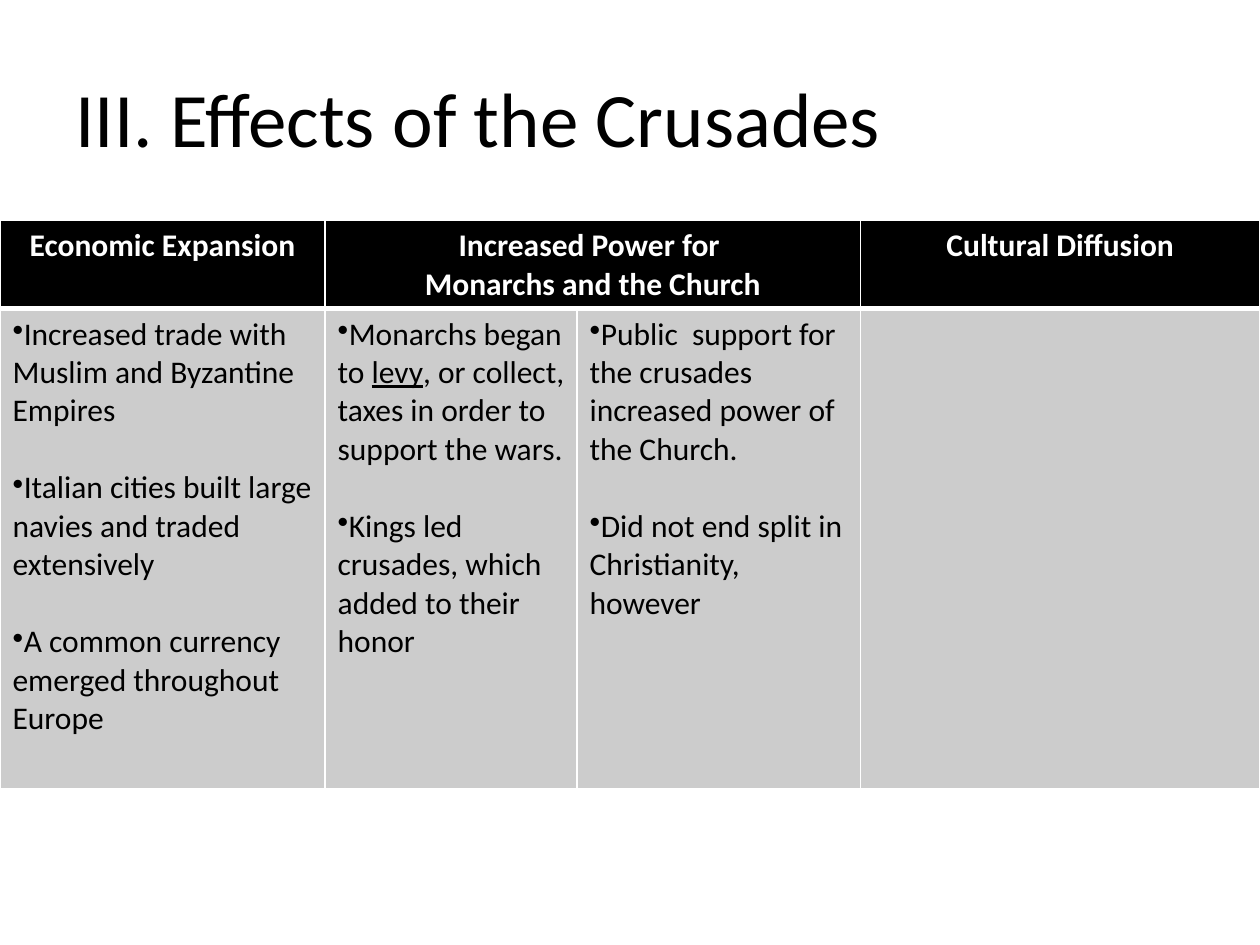
from lxml.etree import SubElement as Sub
from pptx import Presentation
from pptx.dml.color import RGBColor as RGB
from pptx.enum.text import MSO_ANCHOR as ANCHOR, PP_ALIGN as ALIGN
from pptx.oxml.ns import qn
from pptx.util import Inches, Pt

COLORS = {"black": "000000", "white": "FFFFFF", "grey": "CCCCCC"}
TITLE = "III. Effects of the Crusades"
COL_WIDTHS = [2.58, 2, 2.25, 3.17]
ROW_HEIGHTS = [0.7, 3.81]
HEADERS = [
    ["Economic Expansion"],
    ["Increased Power for ", "Monarchs and the Church"],
    [],
    ["Cultural Diffusion"],
]
EFFECTS = [
    ["Increased trade with Muslim and Byzantine Empires",
     "Italian cities built large navies and traded extensively",
     "A common currency emerged throughout Europe"],
    ["Monarchs began to _levy_, or collect, taxes in order to support the wars.",
     "Kings led crusades, which added to their honor"],
    ["Public  support for the crusades increased power of the Church.",
     "Did not end split in Christianity, however"],
    [],
]
HEADER_FONT = {"name": "Calibri", "size": Pt(18), "bold": True}
BODY_FONT = {"name": "Calibri", "size": Pt(18), "bold": False}
TITLE_FONT = {"name": "Calibri", "size": Pt(44)}


def add_text(p, text, fmt, color):
    for i, part in enumerate(text.split("_")):
        r = p.add_run()
        r.text = part
        for name, value in fmt.items():
            setattr(r.font, name, value)
        r.font.color.rgb = RGB.from_string(COLORS[color])
        if i % 2:
            r.font.underline = True


def add_bullet(p):
    pPr = p._p.get_or_add_pPr()
    pPr.set("marL", "0")
    pPr.set("indent", "0")
    Sub(pPr, qn("a:buChar"), char="•")


def set_borders(cell, widths):
    tcPr = cell._tc.get_or_add_tcPr()
    for side, width in zip("LRTB", widths):
        ln = Sub(tcPr, qn("a:ln" + side), w=str(Pt(width)))
        fill = Sub(ln, qn("a:solidFill"))
        Sub(fill, qn("a:srgbClr"), val=COLORS["white"])


def fill_cell(cell, texts, header):
    set_borders(cell, (1, 1, 1, 3) if header else (1, 1, 3, 1))
    cell.fill.solid()
    cell.fill.fore_color.rgb = RGB.from_string(COLORS["black" if header else "grey"])
    tf = cell.text_frame
    for i, text in enumerate(texts):
        p = tf.add_paragraph() if i else tf.paragraphs[0]
        if header:
            p.alignment = ALIGN.CENTER
            add_text(p, text, HEADER_FONT, "white")
        else:
            if i:
                p.space_before = Pt(22)
            add_bullet(p)
            add_text(p, text, BODY_FONT, "black")


prs = Presentation()
prs.slide_width, prs.slide_height = Inches(10), Inches(7.5)
s = prs.slides.add_slide(prs.slide_layouts[6])

tf = s.shapes.add_textbox(Inches(0.5), Inches(0.3), Inches(9), Inches(1.25)).text_frame
tf.word_wrap = True
tf.vertical_anchor = ANCHOR.MIDDLE
add_text(tf.paragraphs[0], TITLE, TITLE_FONT, "black")

table = s.shapes.add_table(
    len(ROW_HEIGHTS), len(COL_WIDTHS), 0, Inches(1.75),
    Inches(sum(COL_WIDTHS)), Inches(sum(ROW_HEIGHTS))).table
for col, width in zip(table.columns, COL_WIDTHS):
    col.width = Inches(width)
for row, height in zip(table.rows, ROW_HEIGHTS):
    row.height = Inches(height)
for r, contents in enumerate([HEADERS, EFFECTS]):
    for c, texts in enumerate(contents):
        fill_cell(table.cell(r, c), texts, r == 0)
table.cell(0, 1).merge(table.cell(0, 2))

prs.save("out.pptx")
